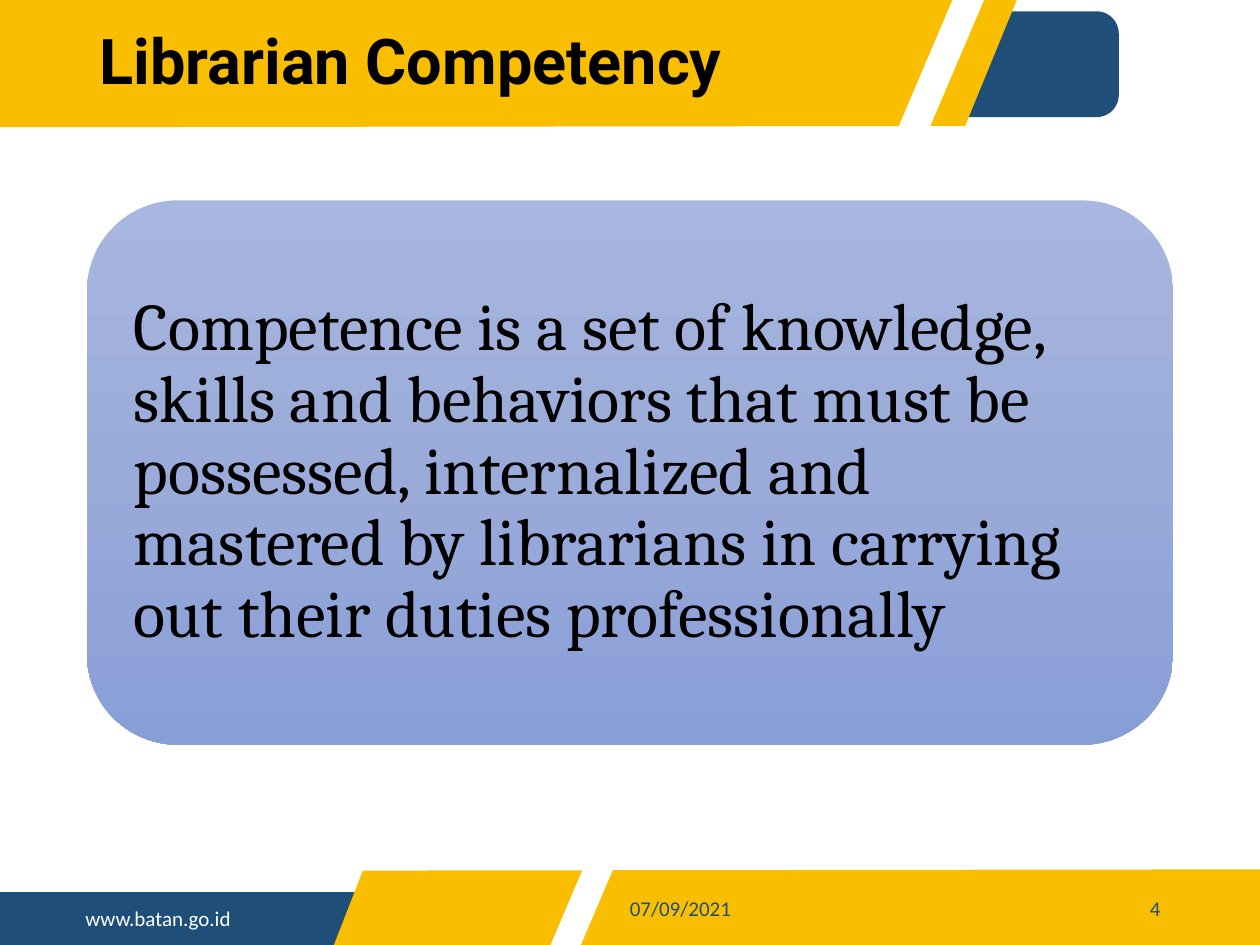
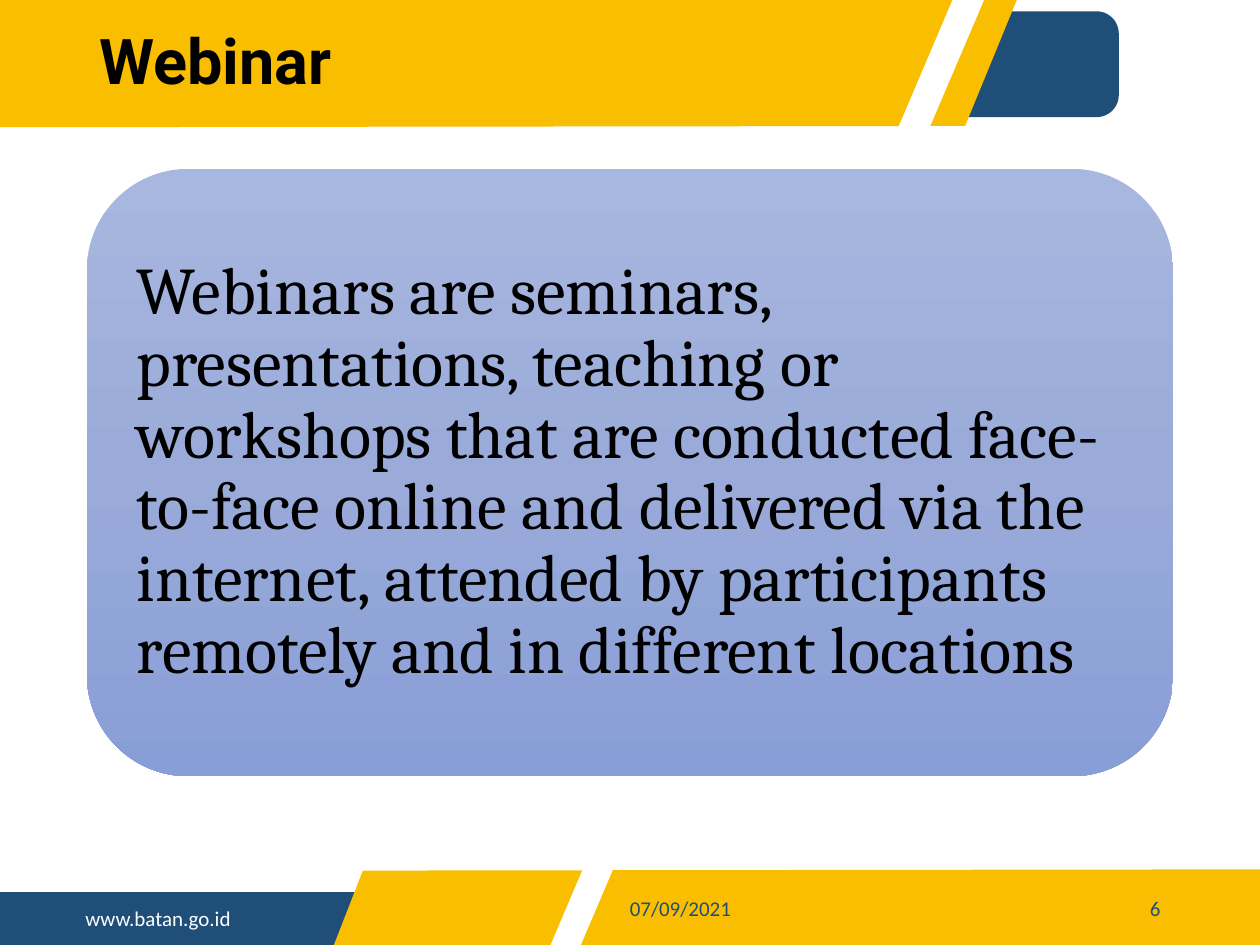
import pptx
import pptx.dml.color
import pptx.enum.shapes
import pptx.enum.text
import pptx.oxml
import pptx.oxml.ns
import pptx.util
from pptx.util import Inches

RGBColor = pptx.dml.color.RGBColor
SHAPE = pptx.enum.shapes.MSO_SHAPE
ALIGN = pptx.enum.text.PP_ALIGN
ANCHOR = pptx.enum.text.MSO_ANCHOR

YELLOW = RGBColor(0xFA, 0xBE, 0x00)
NAVY = RGBColor(0x1F, 0x4E, 0x79)
WHITE = RGBColor(0xFF, 0xFF, 0xFF)
BLACK = RGBColor(0x00, 0x00, 0x00)
CARD_STOPS = [
    (0, RGBColor(0xA8, 0xB7, 0xDF)),
    (50, RGBColor(0x9A, 0xAB, 0xD9)),
    (100, RGBColor(0x88, 0x9E, 0xD7)),
]

SLIDE_WIDTH, SLIDE_HEIGHT = 10, 7.5
CARD_LEFT, CARD_WIDTH, CARD_MIDDLE = 0.69, 8.62, 3.75
DATE = "07/09/2021"
WEBSITE = "www.batan.go.id"

# Title, page number, card height and card text of each slide
PAGES = [
    ("Librarian Competency", 4, 4.32,
     "Competence is a set of knowledge, skills and behaviors that must be "
     "possessed, internalized and mastered by librarians in carrying out "
     "their duties professionally"),
    ("Webinar", 6, 4.82,
     "Webinars are seminars, presentations, teaching or workshops that are "
     "conducted face-to-face online and delivered via the internet, attended "
     "by participants remotely and in different locations"),
]


def paint(shape, color):
    shape.shadow.inherit = False
    shape.fill.solid()
    shape.fill.fore_color.rgb = color
    shape.line.fill.background()


def add_block(slide, kind, left, top, width, height, color):
    shape = slide.shapes.add_shape(
        kind, Inches(left), Inches(top), Inches(width), Inches(height))
    paint(shape, color)
    return shape


def add_polygon(slide, points, color):
    corners = [(Inches(x), Inches(y)) for x, y in points]
    builder = slide.shapes.build_freeform(*corners[0], scale=1.0)
    builder.add_line_segments(corners[1:], close=True)
    paint(builder.convert_to_shape(), color)


def write(shape, text, font_name, size, color, bold=False,
          align=ALIGN.LEFT, anchor=ANCHOR.MIDDLE, line_spacing=1.0):
    frame = shape.text_frame
    frame.word_wrap = True
    frame.vertical_anchor = anchor
    paragraph = frame.paragraphs[0]
    paragraph.alignment = align
    paragraph.line_spacing = line_spacing
    run = paragraph.add_run()
    run.text = text
    run.font.name = font_name
    run.font.size = pptx.util.Pt(size)
    run.font.bold = bold
    run.font.color.rgb = color


def add_text(slide, text, left, top, width, height, *style, **options):
    box = slide.shapes.add_textbox(
        Inches(left), Inches(top), Inches(width), Inches(height))
    write(box, text, *style, **options)


def fill_with_gradient(shape, stops):
    """Fill the shape from top to bottom with (percent, color) stops."""
    shape.fill.gradient()
    shape.fill.gradient_angle = 270
    stop_list = shape.element.spPr.find(".//" + pptx.oxml.ns.qn("a:gsLst"))
    for old_stop in list(stop_list):
        stop_list.remove(old_stop)
    for percent, color in stops:
        stop_list.append(pptx.oxml.parse_xml(
            f'<a:gs {pptx.oxml.ns.nsdecls("a")} pos="{percent * 1000}">'
            f'<a:srgbClr val="{color}"/></a:gs>'))


def add_bands(slide):
    """Draw the header and footer bands and the white stripe across them."""
    add_block(slide, SHAPE.RECTANGLE, 0, 7.08, 2.97, 0.42, NAVY)
    add_polygon(slide, [(2.88, 6.91), (SLIDE_WIDTH, 6.9),
                        (SLIDE_WIDTH, SLIDE_HEIGHT), (2.65, SLIDE_HEIGHT)],
                YELLOW)
    tab = add_block(slide, SHAPE.ROUNDED_RECTANGLE, 6.92, 0.09, 1.96, 0.84, NAVY)
    tab.adjustments[0] = 0.21
    add_polygon(slide, [(0, 0), (8.07, 0), (7.66, 1), (0, 1.01)], YELLOW)
    add_text(slide, WEBSITE, 0.58, 7.14, 2.04, 0.3, "Calibri", 12, WHITE,
             anchor=ANCHOR.TOP)
    add_polygon(slide, [(7.56, 0), (7.81, 0),
                        (4.61, SLIDE_HEIGHT), (4.37, SLIDE_HEIGHT)], WHITE)


def add_title(slide, title):
    add_text(slide, title, CARD_LEFT, 0.09, 6.22, 0.84, "Roboto", 36, BLACK,
             bold=True, line_spacing=0.9)


def add_footer(slide, number):
    add_text(slide, str(number), 8.68, 7.01, 0.63, 0.4, "Calibri", 12, NAVY,
             align=ALIGN.RIGHT)
    add_text(slide, DATE, 4.9, 7.01, 2.43, 0.4, "Calibri", 12, NAVY)


def add_card(slide, text, height):
    card = add_block(slide, SHAPE.ROUNDED_RECTANGLE, CARD_LEFT,
                     CARD_MIDDLE - height / 2, CARD_WIDTH, height, WHITE)
    fill_with_gradient(card, CARD_STOPS)
    frame = card.text_frame
    frame.margin_left = frame.margin_right = Inches(0.16)
    frame.margin_top = frame.margin_bottom = Inches(0.16)
    write(card, text, "Cambria", 38, BLACK, line_spacing=0.9)


def main():
    presentation = pptx.Presentation()
    presentation.slide_width = Inches(SLIDE_WIDTH)
    presentation.slide_height = Inches(SLIDE_HEIGHT)
    blank_layout = presentation.slide_layouts[6]
    for title, number, card_height, text in PAGES:
        slide = presentation.slides.add_slide(blank_layout)
        add_bands(slide)
        add_title(slide, title)
        add_footer(slide, number)
        add_card(slide, text, card_height)
    presentation.save("out.pptx")


if __name__ == "__main__":
    main()
